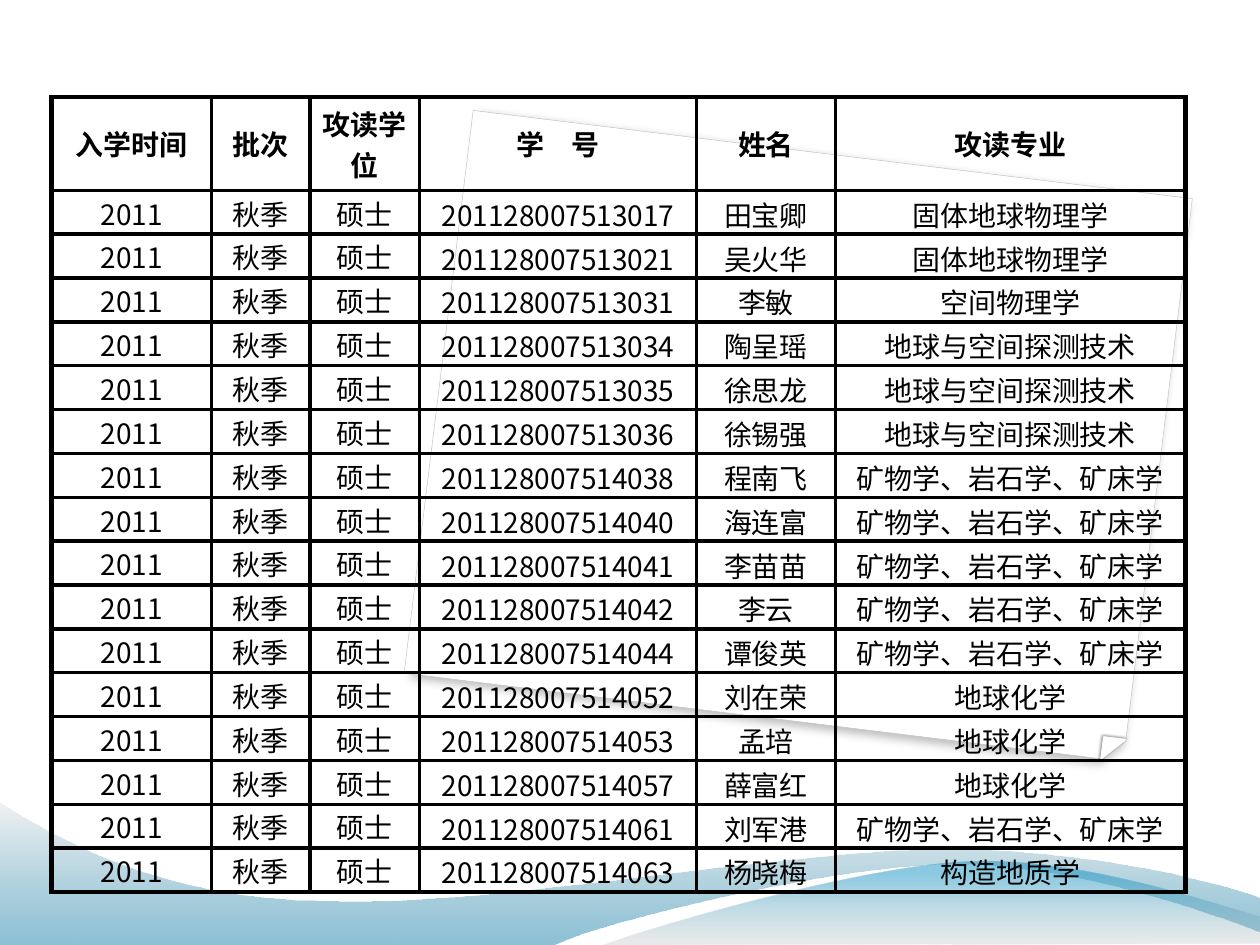
"""Build a slide with a student enrolment table over a folded sheet and waves."""
from lxml.etree import SubElement
from pptx import Presentation
from pptx.dml.color import RGBColor
from pptx.enum.shapes import MSO_SHAPE
from pptx.enum.text import MSO_ANCHOR, PP_ALIGN
from pptx.oxml.ns import qn
from pptx.util import Inches, Pt

COLORS = {"ink": "000000", "paper": "FFFFFF", "edge": "C0C0C0", "deep": "0074A1",
          "mist": "E7E7E7", "grey": "BDBDBD", "sky": "008BBF"}
FONT = "Noto Sans CJK SC"


def rgb(name):
    return RGBColor.from_string(COLORS[name])


prs = Presentation()
prs.slide_width, prs.slide_height = Inches(10), Inches(7.5)
s = prs.slides.add_slide(prs.slide_layouts[6])
s.background.fill.solid()
s.background.fill.fore_color.rgb = rgb("paper")

skew = {"sx": "98500", "sy": "100080", "kx": "100000"}
sheets = [
    (MSO_SHAPE.SNIP_ROUND_RECTANGLE, (3.46, 1.21, 5.75, 4.5), (0, 0.036), "edge", 0.25, (25, 5, 3, 125), skew),
    (MSO_SHAPE.RIGHT_TRIANGLE, (8.75, 5.86, 0.17, 0.17), (), "paper", 1, (47, 1.6, 0.5, 215), {}),
]
for kind, box, adjustments, edge, width, (alpha, blur, dist, angle), extra in sheets:
    sp = s.shapes.add_shape(kind, *map(Inches, box))
    for i, value in enumerate(adjustments):
        sp.adjustments[i] = value
    sp.rotation = 7
    sp._element.spPr.find(qn("a:xfrm")).set("flipV", "1")
    sp.fill.solid()
    sp.fill.fore_color.rgb = rgb("paper")
    sp.line.color.rgb = rgb(edge)
    sp.line.width = Pt(width)
    sp.shadow.inherit = False
    effects = sp._element.spPr.find(qn("a:effectLst"))
    shadow = SubElement(effects, qn("a:outerShdw"), blurRad=str(Pt(blur)), dist=str(Pt(dist)),
                        dir=str(angle * 60000), algn="tl", rotWithShape="0", **extra)
    clr = SubElement(shadow, qn("a:srgbClr"), val=COLORS["ink"])
    SubElement(clr, qn("a:alpha"), val=str(alpha * 1000))

waves = [
    ([[(0, 7.5)],
      [(4.4, 7.5)],
      [(4.76, 7.32), (6.64, 6.86), (7.58, 6.86)],
      [(8.53, 6.86), (9.58, 7.24), (10, 7.4)],
      [(10.01, 7.13)],
      [(9.83, 7.05), (8.7, 6.73), (7.46, 6.74)],
      [(6.22, 6.74), (3.82, 7.21), (2.57, 7.15)],
      [(1.29, 7.14), (0.46, 6.66), (-0.01, 6.36)],
      [(0, 7.5)]],
     [(0, "deep", 45), (1, "mist", 55)]),
    ([[(4.79, 7.5)],
      [(5.09, 7.38), (6.82, 6.87), (7.69, 6.84)],
      [(8.56, 6.8), (9.61, 7.17), (10, 7.28)],
      [(10, 7.49)],
      [(4.79, 7.5)]],
     [(0, "grey", 30), (0.8, "sky", 45)]),
]
for segments, stops in waves:
    points = [(Inches(x), Inches(y)) for segment in segments for x, y in segment]
    fb = s.shapes.build_freeform(*points[0])
    fb.add_line_segments(points[1:], close=True)
    sp = fb.convert_to_shape()
    outline = next(sp._element.iter(qn("a:path")))
    steps = iter(outline.findall(qn("a:lnTo")))
    for segment in segments[1:]:
        first, *rest = [next(steps) for point in segment]
        if rest:
            first.tag = qn("a:cubicBezTo")
        for step in rest:
            first.append(step[0])
            outline.remove(step)
    sp.shadow.inherit = False
    sp.line.fill.background()
    sp.fill.gradient()
    sp.fill.gradient_angle = 90
    for stop, (position, color, alpha) in zip(sp.fill.gradient_stops, stops):
        stop.position = position
        stop.color.rgb = rgb(color)
        SubElement(stop._gs[0], qn("a:alpha"), val=str(alpha * 1000))

headers = ["入学时间", "批次", "攻读学位", "学　号", "姓名", "攻读专业"]
SOLID, SPACE, PROBE = "固体地球物理学", "空间物理学", "地球与空间探测技术"
MINERAL, CHEM, TECTONIC = "矿物学、岩石学、矿床学", "地球化学", "构造地质学"
students = [
    ("201128007513017", "田宝卿", SOLID),
    ("201128007513021", "吴火华", SOLID),
    ("201128007513031", "李敏", SPACE),
    ("201128007513034", "陶呈瑶", PROBE),
    ("201128007513035", "徐思龙", PROBE),
    ("201128007513036", "徐锡强", PROBE),
    ("201128007514038", "程南飞", MINERAL),
    ("201128007514040", "海连富", MINERAL),
    ("201128007514041", "李苗苗", MINERAL),
    ("201128007514042", "李云", MINERAL),
    ("201128007514044", "谭俊英", MINERAL),
    ("201128007514052", "刘在荣", CHEM),
    ("201128007514053", "孟培", CHEM),
    ("201128007514057", "薛富红", CHEM),
    ("201128007514061", "刘军港", MINERAL),
    ("201128007514063", "杨晓梅", TECTONIC),
]
rows = [headers] + [("2011", "秋季", "硕士", *student) for student in students]
widths = [1.27, 0.78, 0.87, 2.2, 1.1, 2.78]
body_height = Inches(5.57) // len(students)
body_margins = {"margin_left": 0.01, "margin_top": 0.01, "margin_right": 0.01, "margin_bottom": 0}

table = s.shapes.add_table(len(rows), len(widths), Inches(0.41), Inches(0.77), Inches(9), Inches(6.21)).table
table.first_row = table.horz_banding = False
for col, width in zip(table.columns, widths):
    col.width = Inches(width)
for i, texts in enumerate(rows):
    head = i == 0
    table.rows[i].height = Inches(0.59) if head else body_height
    for j, text in enumerate(texts):
        cell = table.cell(i, j)
        cell.vertical_anchor = MSO_ANCHOR.MIDDLE if head or j < 3 else MSO_ANCHOR.BOTTOM
        if not head:
            for name, value in body_margins.items():
                setattr(cell, name, Inches(value))
        thick = {"lnL": j == 0, "lnR": j == len(widths) - 1, "lnT": head, "lnB": False}
        for side, outer in thick.items():
            ln = SubElement(cell._tc.get_or_add_tcPr(), qn(f"a:{side}"), w=str(Pt(3 if outer else 2.25)))
            SubElement(SubElement(ln, qn("a:solidFill")), qn("a:srgbClr"), val=COLORS["ink"])
        cell.fill.background()
        p = cell.text_frame.paragraphs[0]
        p.alignment = PP_ALIGN.CENTER
        if head and text != "攻读学位":
            pPr = p._p.get_or_add_pPr()
            pPr.set("marL", str(Inches(0.3)))
            pPr.set("indent", str(Inches(-0.3)))
        r = p.add_run()
        r.text = text
        for name, value in {"size": Pt(16), "name": FONT, "bold": head}.items():
            setattr(r.font, name, value)
        r.font.color.rgb = rgb("ink")
        SubElement(r._r.get_or_add_rPr(), qn("a:ea"), typeface=FONT)

prs.save("out.pptx")
